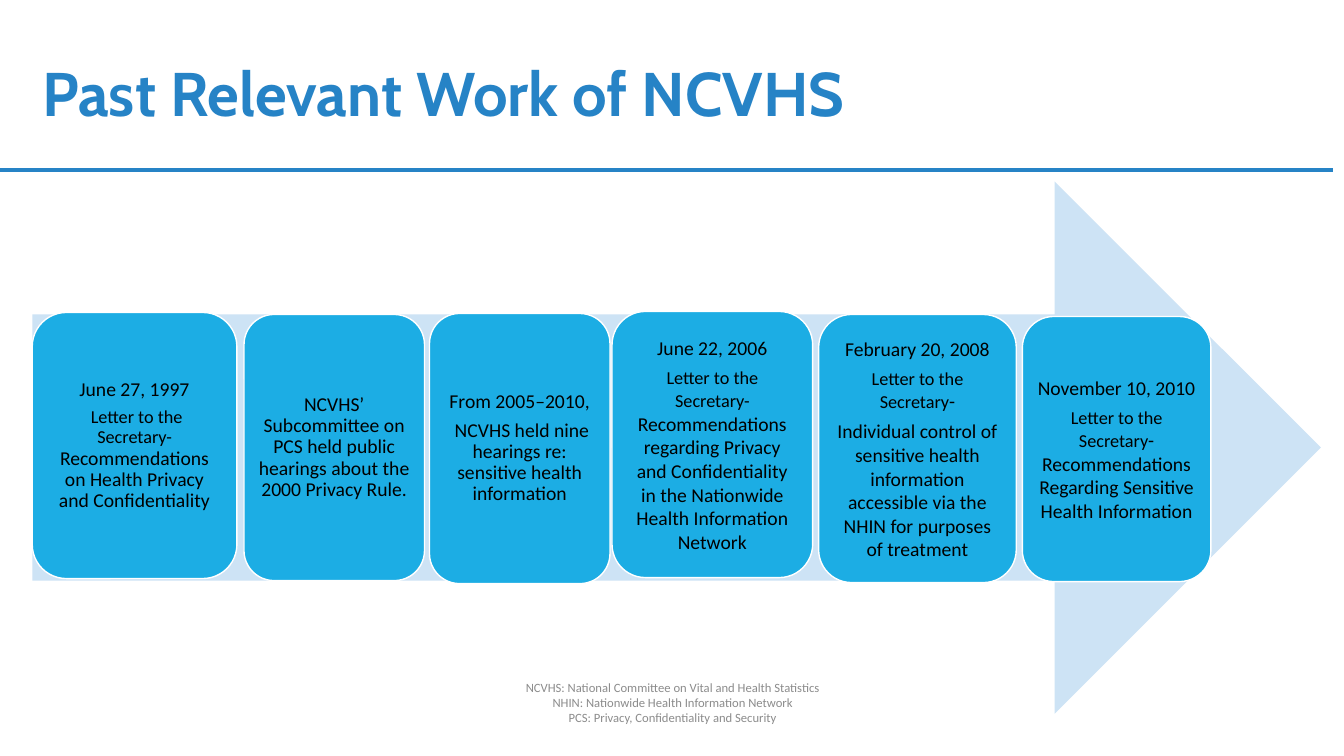
"""Build the NCVHS timeline slide."""
from lxml import etree
from pptx import Presentation, util as u
from pptx.dml.color import RGBColor
from pptx.enum import shapes, text
from pptx.oxml import ns

INK = "000000"
TOP_LETTER = ("Letter to the Secretary", 13)
MILESTONES = [
    ((0.32, 3.1, 2.03, 2.64), 0.9, [
        "June 27, 1997",
        [(" Letter to the Secretary-", 13),
         (" Recommendations on Health Privacy and Confidentiality", 14)]]),
    ((2.42, 3.12, 1.79, 2.64), 0.9, [
        "NCVHS’ Subcommittee on PCS held public hearings about the 2000 Privacy Rule."]),
    ((4.26, 3.11, 1.79, 2.68), 0.9, [
        "From 2005–2010,",
        " NCVHS held nine hearings re: sensitive health information"]),
    ((6.07, 3.09, 1.99, 2.64), 1.0, [
        "June 22, 2006",
        [("Letter to the Secretary-", 13),
         (" Recommendations regarding Privacy and Confidentiality in the "
          "Nationwide Health Information Network", 14)]]),
    ((8.12, 3.12, 1.96, 2.66), 1.0, [
        "February 20, 2008",
        [TOP_LETTER, ("-", 14)],
        "Individual control of sensitive health information accessible via "
        "the NHIN for purposes of treatment"]),
    ((10.14, 3.14, 1.87, 2.63), 1.0, [
        "November 10, 2010",
        [TOP_LETTER, ("-Recommendations Regarding Sensitive Health Information", 14)]]),
]
ABBREVIATIONS = [
    "NCVHS: National Committee on Vital and Health Statistics",
    "NHIN: Nationwide Health Information Network",
    "PCS: Privacy, Confidentiality and Security",
]


def paint(target, colour):
    target.rgb = RGBColor.from_string(colour)


def write(frame, paragraphs, size=14, font="Calibri", colour=INK, bold=False,
          align=text.PP_ALIGN.CENTER, spacing=1.0, after=0, inset=None):
    frame.word_wrap = True
    frame.auto_size = text.MSO_AUTO_SIZE.NONE
    frame.vertical_anchor = text.MSO_ANCHOR.MIDDLE
    if inset is not None:
        frame.margin_left = frame.margin_right = u.Inches(inset)
        frame.margin_top = frame.margin_bottom = u.Inches(inset)
    for index, content in enumerate(paragraphs):
        para = frame.paragraphs[0] if index == 0 else frame.add_paragraph()
        para.alignment = align
        para.line_spacing = spacing
        para.space_before = u.Pt(0)
        para.space_after = u.Pt(after)
        spans = [(content, size)] if isinstance(content, str) else content
        for words, points in spans:
            span = para.add_run()
            span.text = words
            span.font.name = font
            span.font.size = u.Pt(points)
            span.font.bold = bold
            paint(span.font.color, colour)


class TimelinePage:
    """Hold the colours and the current slide and draw its elements."""

    blue, pale, bright, white, grey = "2683C6", "CDE3F5", "1CADE4", "FFFFFF", "8C8C8C"

    def __init__(self, deck):
        self.page = deck.slides.add_slide(deck.slide_layouts[5])

    def rule(self, y, right):
        line = self.page.shapes.add_connector(
            shapes.MSO_CONNECTOR.STRAIGHT, 0, u.Inches(y), u.Inches(right), u.Inches(y))
        paint(line.line.color, self.blue)
        line.line.width = u.Pt(2.75)
        etree.SubElement(line._element.spPr, ns.qn("a:effectLst"))

    def title(self, words, place):
        box = self.page.shapes.title
        box.left, box.top, box.width, box.height = map(u.Inches, place)
        write(box.text_frame, [words], size=44, font="Cabin", colour=self.blue,
              bold=True, align=text.PP_ALIGN.LEFT, spacing=0.9)

    def block(self, preset, place, fill, outline=None):
        box = self.page.shapes.add_shape(preset, *map(u.Inches, place))
        box.shadow.inherit = False
        box.fill.solid()
        paint(box.fill.fore_color, fill)
        if outline:
            paint(box.line.color, outline)
            box.line.width = u.Pt(1)
        else:
            box.line.fill.background()
        return box

    def arrow(self, place):
        self.block(shapes.MSO_SHAPE.RIGHT_ARROW, place, self.pale)

    def milestone(self, place, spacing, paragraphs):
        box = self.block(shapes.MSO_SHAPE.ROUNDED_RECTANGLE, place, self.bright, self.white)
        write(box.text_frame, paragraphs, spacing=spacing, after=5, inset=0.06)

    def note(self, lines, place):
        box = self.page.shapes.add_textbox(*map(u.Inches, place))
        write(box.text_frame, lines, size=9, colour=self.grey)


def main():
    deck = Presentation()
    deck.slide_width, deck.slide_height = u.Inches(13.33), u.Inches(7.5)
    timeline = TimelinePage(deck)
    timeline.rule(1.69, 13.22)
    timeline.title("Past Relevant Work of NCVHS", (0.32, 0.23, 10.9, 1.45))
    timeline.arrow((0.32, 1.8, 12.78, 5.28))
    for place, spacing, paragraphs in MILESTONES:
        timeline.milestone(place, spacing, paragraphs)
    timeline.note(ABBREVIATIONS, (4.42, 6.66, 4.5, 0.62))
    deck.save("out.pptx")


if __name__ == "__main__":
    main()
